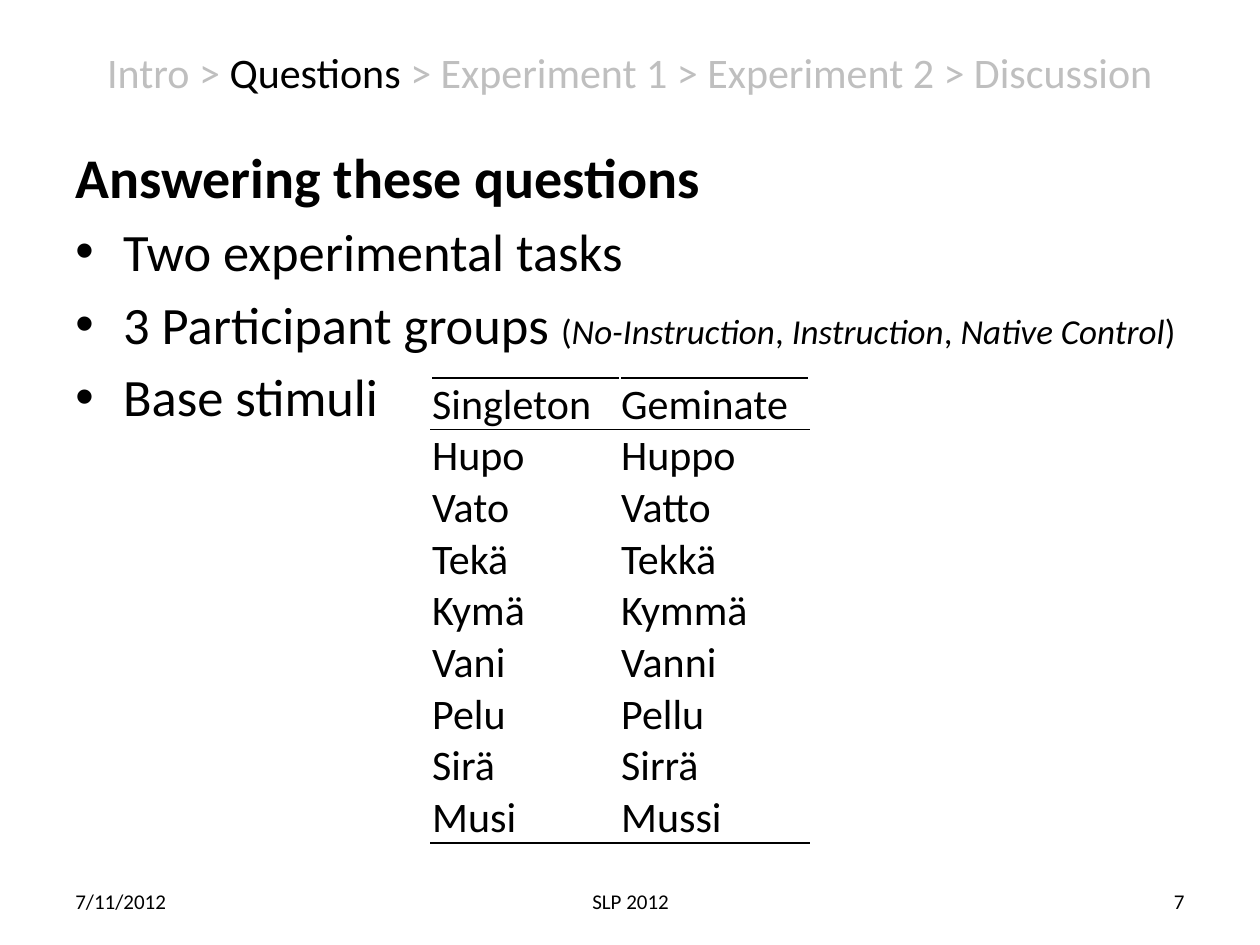
from pptx import Presentation
from pptx.dml.color import RGBColor
from pptx.enum.text import MSO_ANCHOR, PP_ALIGN
from pptx.oxml.ns import qn
from pptx.util import Inches, Pt
from lxml.etree import SubElement

BLACK = RGBColor(0, 0, 0)
WHITE = RGBColor(255, 255, 255)
GREY = RGBColor(0xBF, 0xBF, 0xBF)


def add_run(para, text, size, color=BLACK, bold=False, italic=False):
    run = para.add_run()
    run.text = text
    font = run.font
    font.name = "Calibri"
    font.size = Pt(size)
    font.bold = bold
    font.italic = italic
    font.color.rgb = color


def set_edge(cell, side, color):
    """Draw a 1 pt border; side is L, R, T or B, called in that order."""
    line = SubElement(cell._tc.get_or_add_tcPr(), qn(f"a:ln{side}"), w=str(Pt(1)))
    fill = SubElement(line, qn("a:solidFill"))
    SubElement(fill, qn("a:srgbClr"), val=str(color))


prs = Presentation()
prs.slide_width = Inches(10)
prs.slide_height = Inches(7.5)
slide = prs.slides.add_slide(prs.slide_layouts[5])

# Title: the current section stands out in black
title = slide.shapes.title
title.left, title.top = Inches(0.5), Inches(0.3)
title.width, title.height = Inches(9), Inches(0.53)
title.text_frame.vertical_anchor = MSO_ANCHOR.MIDDLE
para = title.text_frame.paragraphs[0]
para.alignment = PP_ALIGN.CENTER
add_run(para, "Intro > ", 24, GREY)
add_run(para, "Questions", 24)
add_run(para, " > Experiment 1 > Experiment 2 > Discussion", 24, GREY)

# Heading and bullets
body = slide.shapes.add_textbox(Inches(0.5), Inches(1.08), Inches(9), Inches(5.62))
frame = body.text_frame
frame.word_wrap = True
head = frame.paragraphs[0]
head.space_before = Pt(5.5)
add_run(head, "Answering these questions", 32, bold=True)
for text in ("Two experimental tasks", "3 Participant groups ", "Base stimuli"):
    para = frame.add_paragraph()
    para.space_before = Pt(5.5)
    add_run(para, text, 30)
    props = para._p.get_or_add_pPr()
    props.set("marL", str(Inches(0.38)))
    props.set("indent", str(Inches(-0.38)))
    SubElement(props, qn("a:buFont"), typeface="Arial")
    SubElement(props, qn("a:buChar"), char="•")

groups = ("(", "No-Instruction", ", ", "Instruction", ", ", "Native Control", ")")
for i, text in enumerate(groups):
    add_run(frame.paragraphs[2], text, 20, italic=i % 2 == 1)

# Footer
for text, left, width, align in (
    ("7/11/2012", 0.5, 2.33, PP_ALIGN.LEFT),
    ("SLP 2012", 3.42, 3.17, PP_ALIGN.CENTER),
    ("7", 7.17, 2.33, PP_ALIGN.RIGHT),
):
    box = slide.shapes.add_textbox(Inches(left), Inches(6.95), Inches(width), Inches(0.4))
    box.text_frame.word_wrap = True
    box.text_frame.vertical_anchor = MSO_ANCHOR.MIDDLE
    para = box.text_frame.paragraphs[0]
    para.alignment = align
    add_run(para, text, 12)

# Stimulus table: rules above and below the header and under the last row
words = (
    ("Singleton", "Geminate"),
    ("Hupo", "Huppo"),
    ("Vato", "Vatto"),
    ("Tekä", "Tekkä"),
    ("Kymä", "Kymmä"),
    ("Vani", "Vanni"),
    ("Pelu", "Pellu"),
    ("Sirä", "Sirrä"),
    ("Musi", "Mussi"),
)
last = len(words) - 1
table = slide.shapes.add_table(
    len(words), 2, Inches(3.42), Inches(3), Inches(3), Inches(3.69)
).table
table.first_row = table.horz_banding = False
for r, pair in enumerate(words):
    table.rows[r].height = Inches(0.41 if r else 0.38)
    for c, word in enumerate(pair):
        cell = table.cell(r, c)
        cell.margin_left = cell.margin_right = cell.margin_top = Inches(0.01)
        cell.margin_bottom = 0
        add_run(cell.text_frame.paragraphs[0], word, 24)
        set_edge(cell, "L", WHITE)
        set_edge(cell, "R", WHITE)
        set_edge(cell, "T", BLACK if r in (0, 1) else WHITE)
        set_edge(cell, "B", BLACK if r in (0, last) else WHITE)
        cell.fill.solid()
        cell.fill.fore_color.rgb = WHITE

prs.save("out.pptx")
